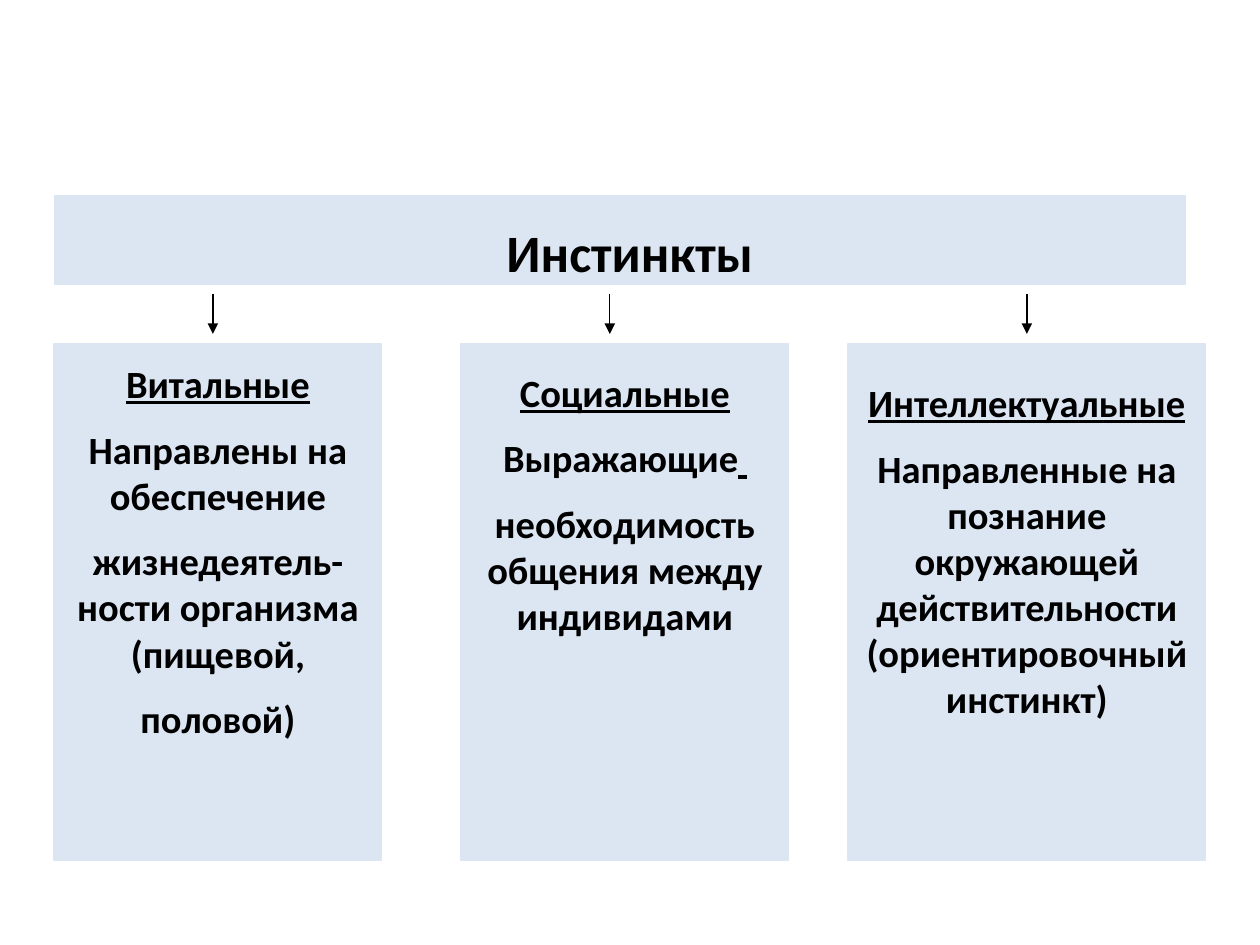
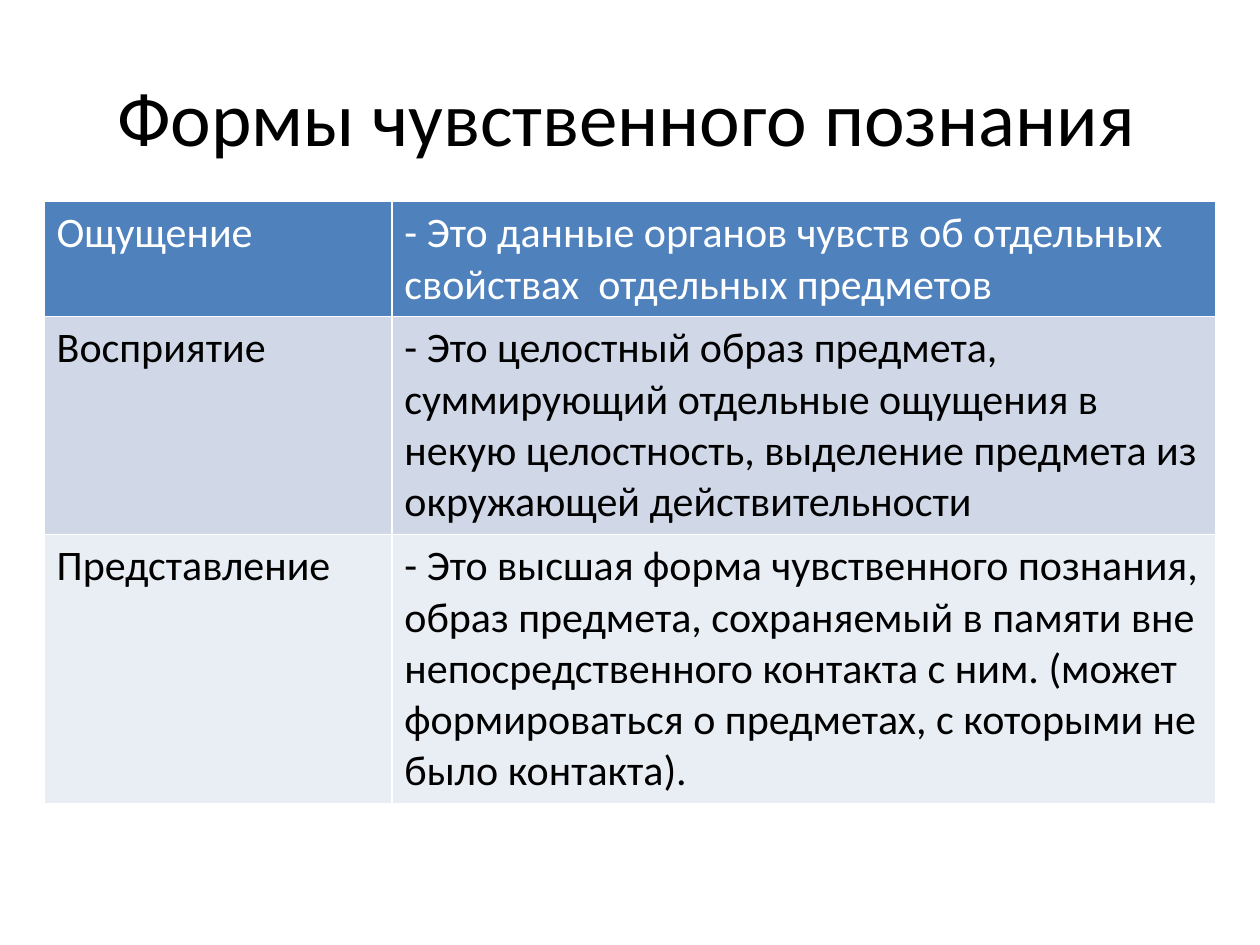
"""Build two slides: kinds of instincts and forms of sensory cognition."""
import pptx
import pptx.chart.data
import pptx.dml.color
import pptx.enum.shapes
import pptx.enum.text
import pptx.oxml
import pptx.oxml.ns
import pptx.util

Inches = pptx.util.Inches
Pt = pptx.util.Pt
RGB = pptx.dml.color.RGBColor.from_string
ALIGN = pptx.enum.text.PP_ALIGN

COLORS = {
    "text": "000000",
    "panel": "DCE6F2",
    "header": "4F81BD",
    "header_text": "FFFFFF",
    "odd_row": "D0D8E8",
    "even_row": "E9EDF4",
}


def write(paragraph, text, size=22, bold=False, underline=False,
          color="text", align=ALIGN.LEFT, space_before=0):
    paragraph.alignment = align
    paragraph.space_before = Pt(space_before)
    run = paragraph.add_run()
    run.text = text
    run.font.name = "Calibri"
    run.font.size = Pt(size)
    run.font.bold = bold
    run.font.underline = underline
    run.font.color.rgb = RGB(COLORS[color])


def add_panel(slide, left, top, width, height, text_box, paragraphs, size):
    panel = slide.shapes.add_shape(
        pptx.enum.shapes.MSO_SHAPE.RECTANGLE,
        Inches(left), Inches(top), Inches(width), Inches(height))
    panel.shadow.inherit = False
    panel.fill.solid()
    panel.fill.fore_color.rgb = RGB(COLORS["panel"])
    panel.line.color.rgb = RGB(COLORS["panel"])
    panel.line.width = Pt(0.75)

    frame = slide.shapes.add_textbox(*map(Inches, text_box)).text_frame
    frame.word_wrap = True
    for index, runs in enumerate(paragraphs):
        paragraph = frame.add_paragraph() if index else frame.paragraphs[0]
        for text, underline in runs:
            write(paragraph, text, size=size, bold=True, underline=underline,
                  align=ALIGN.CENTER, space_before=size / 2 if index else 0)


deck = pptx.Presentation()
deck.slide_width = Inches(10)
deck.slide_height = Inches(7.5)

instincts = deck.slides.add_slide(deck.slide_layouts[6])
add_panel(instincts, 0.43, 1.55, 8.98, 0.71, (1.22, 1.7, 7.56, 0.61),
          [[("Инстинкты", False)]], 30)

KINDS = [
    (0.43, 2.6, 2.81, 3.25, 1.69, [
        [("Витальные", True)],
        [("Направлены на обеспечение", False)],
        [("жизнедеятель-ности организма (пищевой,", False)],
        [("половой)", False)],
    ]),
    (3.66, 2.6, 2.88, 2.32, 4.84, [
        [("Социальные", True)],
        [("Выражающие", False), (" ", True)],
        [("необходимость общения между индивидами", False)],
    ]),
    (6.73, 2.84, 2.96, 2.88, 8.15, [
        [("Интеллектуальные", True)],
        [("Направленные на познание окружающей действительности "
          "(ориентировочный инстинкт)", False)],
    ]),
]
for left, width, text_top, text_height, arrow_x, paragraphs in KINDS:
    add_panel(instincts, left, 2.73, width, 4.1,
              (left, text_top, width, text_height), paragraphs, 22)
    arrow = instincts.shapes.add_connector(
        pptx.enum.shapes.MSO_CONNECTOR.STRAIGHT,
        Inches(arrow_x), Inches(2.33), Inches(arrow_x), Inches(2.65))
    arrow.line.color.rgb = RGB(COLORS["text"])
    arrow.line.width = Pt(0.75)
    arrow_head = pptx.oxml.parse_xml(
        f'<a:tailEnd {pptx.oxml.ns.nsdecls("a")} type="triangle"/>')
    no_effects = pptx.oxml.parse_xml(
        f'<a:effectLst {pptx.oxml.ns.nsdecls("a")}/>')
    arrow.line._get_or_add_ln().append(arrow_head)
    arrow._element.spPr.append(no_effects)

cognition = deck.slides.add_slide(deck.slide_layouts[5])
heading = cognition.shapes.title
heading.left, heading.top = Inches(0.83), Inches(0.29)
heading.width, heading.height = Inches(8.83), Inches(1.25)
heading.text_frame.vertical_anchor = pptx.enum.text.MSO_ANCHOR.MIDDLE
write(heading.text_frame.paragraphs[0], "Формы чувственного познания", size=44)

FORMS = [
    ("Ощущение",
     "- Это данные органов чувств об отдельных свойствах  отдельных предметов",
     0.91, "header", "header_text"),
    ("Восприятие",
     "- Это целостный образ предмета, суммирующий отдельные ощущения в некую "
     "целостность, выделение предмета из окружающей действительности",
     1.73, "odd_row", "text"),
    ("Представление",
     "- Это высшая форма чувственного познания, образ предмета, сохраняемый в "
     "памяти вне непосредственного контакта с ним. (может формироваться о "
     "предметах, с которыми не было контакта).",
     2.13, "even_row", "text"),
]
forms = cognition.shapes.add_table(
    len(FORMS), 2, Inches(0.35), Inches(1.6), Inches(9.3), Inches(4.77)).table
forms.columns[0].width = Inches(2.76)
forms.columns[1].width = Inches(6.54)
for row, (term, meaning, height, fill, color) in zip(forms.rows, FORMS):
    row.height = Inches(height)
    for cell, text in zip(row.cells, (term, meaning)):
        cell.fill.solid()
        cell.fill.fore_color.rgb = RGB(COLORS[fill])
        write(cell.text_frame.paragraphs[0], text, size=24, color=color)

deck.save("out.pptx")
